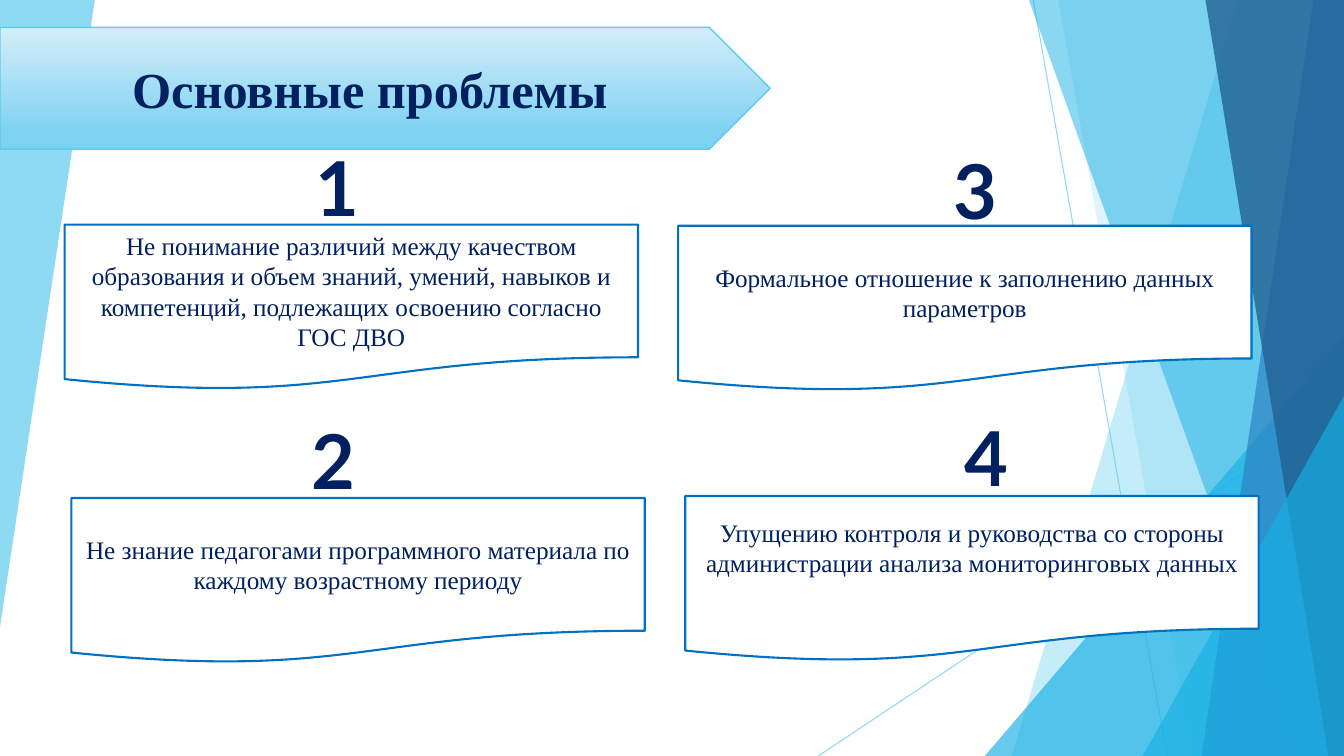
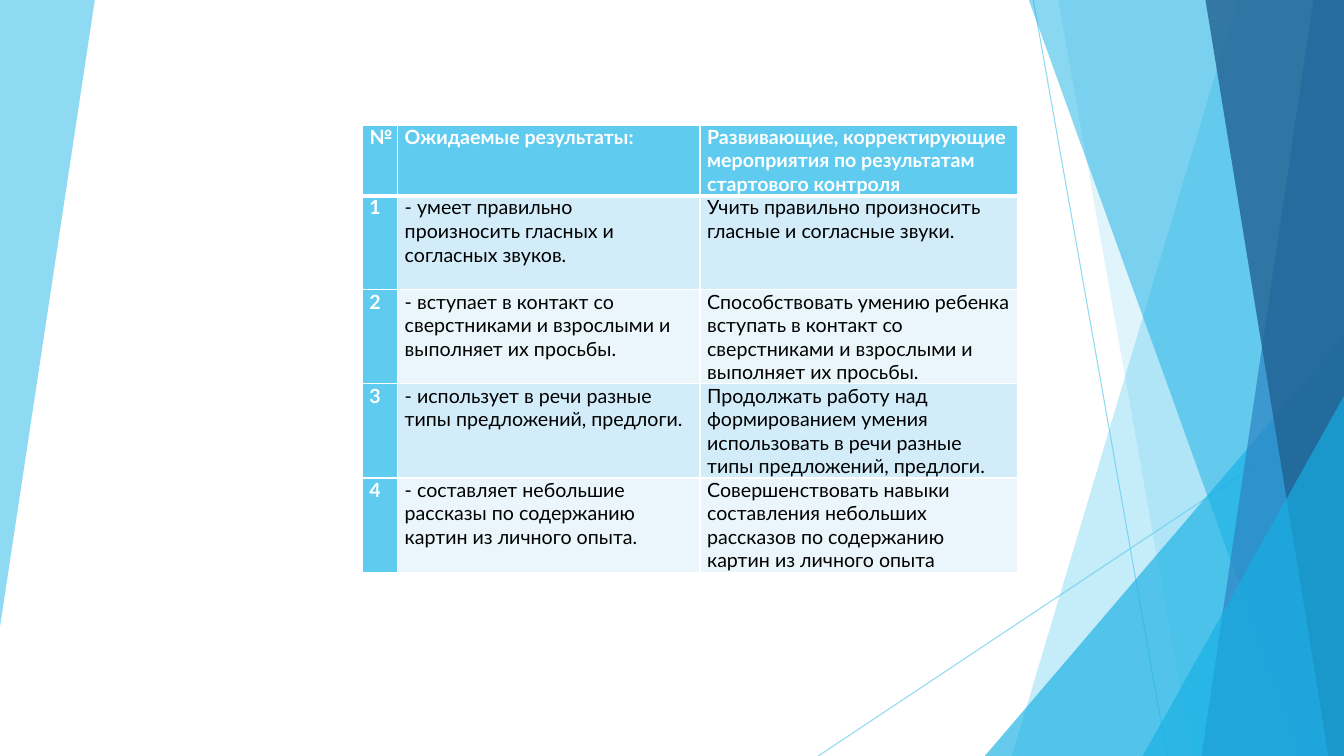
from dataclasses import dataclass

import lxml.etree
import pptx
import pptx.dml.color
import pptx.enum.shapes
import pptx.enum.text
import pptx.oxml.ns
import pptx.util

Cm = pptx.util.Cm
Pt = pptx.util.Pt
qn = pptx.oxml.ns.qn
Shape = pptx.enum.shapes.MSO_SHAPE
Align = pptx.enum.text.PP_ALIGN

# Shared look
WIDE, HIGH = 33.87, 19.05
SKY, AQUA, BLUE, DEEP = "5FCBEF", "17B0E4", "2E83C3", "226292"
NAVY, EDGE, WHITE, BLACK = "002060", "0070C0", "FFFFFF", "000000"
SERIF, SANS = "Times New Roman", "Lato"


@dataclass
class Band:
    """Outline given by its corner points."""
    points: list[tuple[float, float]]
    tint: str
    alpha: int


@dataclass
class Wedge:
    """Right triangle that fills the lower right corner."""
    left: float
    top: float


@dataclass
class Ray:
    start: tuple[float, float]
    end: tuple[float, float]


@dataclass
class Card:
    left: float
    top: float
    text: str
    mark: str
    mark_x: float
    mark_y: float
    foot: float = 0.13


def side(top: float, base: float, tint: str, alpha: int) -> Band:
    """Band between a slanted edge and the right side of the slide."""
    return Band([(top, 0), (WIDE, 0), (WIDE, HIGH), (base, HIGH)], tint, alpha)


DECOR = [
    Band([(0, 0), (2.39, 0), (0, 15.8)], SKY, 70),
    Ray((26.04, 0), (29.41, HIGH)),
    Ray((WIDE, 10.24), (20.62, HIGH)),
    side(31.19, 25.5, SKY, 36),
    side(26.67, 30.05, SKY, 20),
    Wedge(24.82, 8.46),
    side(25.93, 32.79, AQUA, 50),
    side(33.1, 30.28, BLUE, 70),
    side(30.38, 33.48, DEEP, 80),
    Wedge(28.8, 9.98),
]

CARDS = [
    Card(1.63, 5.66, "Не понимание различий между качеством образования и объем "
         "знаний, умений, навыков и компетенций, подлежащих освоению согласно "
         "ГОС ДВО", "1", 7.7, 3.43),
    Card(1.8, 12.55, "Не знание педагогами программного материала по каждому "
         "возрастному периоду", "2", 7.59, 10.31),
    Card(17.27, 12.5, "Упущению контроля и руководства со стороны администрации "
         "анализа мониторинговых данных", "4", 24.05, 10.24, 0.89),
    Card(17.09, 5.69, "Формальное отношение к заполнению данных параметров",
         "3", 23.77, 3.51),
]

ROWS = [
    ("№", "Ожидаемые результаты:",
     "Развивающие, корректирующие мероприятия по результатам стартового контроля"),
    ("1", "- умеет правильно произносить гласных и согласных звуков.",
     "Учить правильно произносить гласные и согласные звуки."),
    ("2", "- вступает в контакт со сверстниками и взрослыми и выполняет их просьбы.",
     "Способствовать умению ребенка вступать в контакт со сверстниками и "
     "взрослыми и выполняет их просьбы."),
    ("3", "- использует в речи разные типы предложений, предлоги.",
     "Продолжать работу над формированием умения использовать в речи разные "
     "типы предложений, предлоги."),
    ("4", "- составляет небольшие рассказы по содержанию картин из личного опыта.",
     "Совершенствовать навыки составления небольших рассказов по содержанию "
     "картин из личного опыта"),
]


# Helpers
def rgb(code: str) -> pptx.dml.color.RGBColor:
    return pptx.dml.color.RGBColor.from_string(code)


def fade(shape, alpha: int) -> None:
    for tint in shape._element.spPr.iter(qn("a:srgbClr")):
        lxml.etree.SubElement(tint, qn("a:alpha"), val=str(alpha * 1000))


def paint(shape, tint: str) -> None:
    shape.shadow.inherit = False
    shape.fill.solid()
    shape.fill.fore_color.rgb = rgb(tint)
    shape.line.fill.background()


def edge(shape, tint: str, width: float) -> None:
    shape.line.color.rgb = rgb(tint)
    shape.line.width = Pt(width)


def write(frame, text: str, size: int, face: str, tint: str,
          bold: bool = False, align=Align.CENTER) -> None:
    line = frame.paragraphs[0]
    line.text = text
    line.alignment = align
    font = line.font
    font.size, font.name, font.bold = Pt(size), face, bold
    font.color.rgb = rgb(tint)


# Backdrop
def draw_band(slide, band: Band) -> None:
    first, *rest = [(Cm(x), Cm(y)) for x, y in band.points]
    pen = slide.shapes.build_freeform(*first)
    pen.add_line_segments(rest, close=True)
    shape = pen.convert_to_shape()
    paint(shape, band.tint)
    fade(shape, band.alpha)


def draw_wedge(slide, wedge: Wedge) -> None:
    shape = slide.shapes.add_shape(
        Shape.ISOSCELES_TRIANGLE, Cm(wedge.left), Cm(wedge.top),
        Cm(WIDE - wedge.left), Cm(HIGH - wedge.top))
    shape.adjustments[0] = 1
    paint(shape, AQUA)
    fade(shape, 66)


def draw_ray(slide, ray: Ray) -> None:
    ends = [Cm(v) for v in ray.start + ray.end]
    line = slide.shapes.add_connector(
        pptx.enum.shapes.MSO_CONNECTOR.STRAIGHT, *ends)
    edge(line, SKY, 0.75)
    fade(line, 70)
    lxml.etree.SubElement(line._element.spPr, qn("a:effectLst"))


DRAW = {Band: draw_band, Wedge: draw_wedge, Ray: draw_ray}


def new_slide(deck):
    slide = deck.slides.add_slide(deck.slide_layouts[6])
    for part in DECOR:
        DRAW[type(part)](slide, part)
    return slide


# Problems slide
def draw_title(slide, text: str) -> None:
    shape = slide.shapes.add_shape(
        Shape.PENTAGON, Cm(0), Cm(0.69), Cm(19.41), Cm(3.07))
    shape.shadow.inherit = False
    shape.fill.gradient()
    shape.fill.gradient_angle = 270
    shades = [(0, "D4EEF9"), (0.88, "7DD1F1")]
    for stop, (place, tint) in zip(shape.fill.gradient_stops, shades):
        stop.position = place
        stop.color.rgb = rgb(tint)
    edge(shape, SKY, 1)
    write(shape.text_frame, text, 36, SERIF, NAVY, True)


def draw_card(slide, card: Card) -> None:
    shape = slide.shapes.add_shape(
        Shape.FLOWCHART_DOCUMENT, Cm(card.left), Cm(card.top), Cm(14.45), Cm(4.17))
    paint(shape, WHITE)
    edge(shape, EDGE, 1.5)
    shape.text_frame.margin_bottom = Cm(card.foot)
    write(shape.text_frame, card.text, 18, SERIF, NAVY)


def draw_mark(slide, card: Card) -> None:
    box = slide.shapes.add_textbox(
        Cm(card.mark_x), Cm(card.mark_y), Cm(1.5), Cm(2.57))
    box.text_frame.word_wrap = False
    write(box.text_frame, card.mark, 54, SANS, NAVY, True)


# Results slide
def frame_cell(cell, base: int) -> None:
    props = cell._tc.get_or_add_tcPr()
    for name, width in (("lnL", 1), ("lnR", 1), ("lnT", 1), ("lnB", base)):
        line = lxml.etree.SubElement(props, qn(f"a:{name}"), w=str(Pt(width)))
        fill = lxml.etree.SubElement(line, qn("a:solidFill"))
        lxml.etree.SubElement(fill, qn("a:srgbClr"), val=WHITE)


def fill_cell(cell, row: int, col: int, text: str) -> None:
    head = row == 0 or col == 0
    frame_cell(cell, 3 if row == 0 else 1)
    cell.fill.solid()
    cell.fill.fore_color.rgb = rgb(SKY if head else ("EAF6FC", "D2ECF9")[row % 2])
    cell.margin_left = cell.margin_right = Cm(0.18)
    cell.margin_top = cell.margin_bottom = 0
    write(cell.text_frame, text, 14, SANS, WHITE if head else BLACK, head, Align.LEFT)


def draw_table(slide) -> None:
    widths = [0.89, 7.62, 8]
    heights = [1.78] + [2.37] * (len(ROWS) - 1)
    table = slide.shapes.add_table(
        len(ROWS), len(widths), Cm(9.13), Cm(3.15),
        Cm(sum(widths)), Cm(sum(heights))).table
    table.horz_banding = False
    for col, width in zip(table.columns, widths):
        col.width = Cm(width)
    for row, height in zip(table.rows, heights):
        row.height = Cm(height)
    for r, texts in enumerate(ROWS):
        for c, text in enumerate(texts):
            fill_cell(table.cell(r, c), r, c, text)


def main() -> None:
    deck = pptx.Presentation()
    deck.slide_width, deck.slide_height = Cm(WIDE), Cm(HIGH)

    slide = new_slide(deck)
    draw_title(slide, "Основные проблемы")
    for card in CARDS:
        draw_card(slide, card)
    for card in CARDS:
        draw_mark(slide, card)

    draw_table(new_slide(deck))
    deck.save("out.pptx")


if __name__ == "__main__":
    main()
